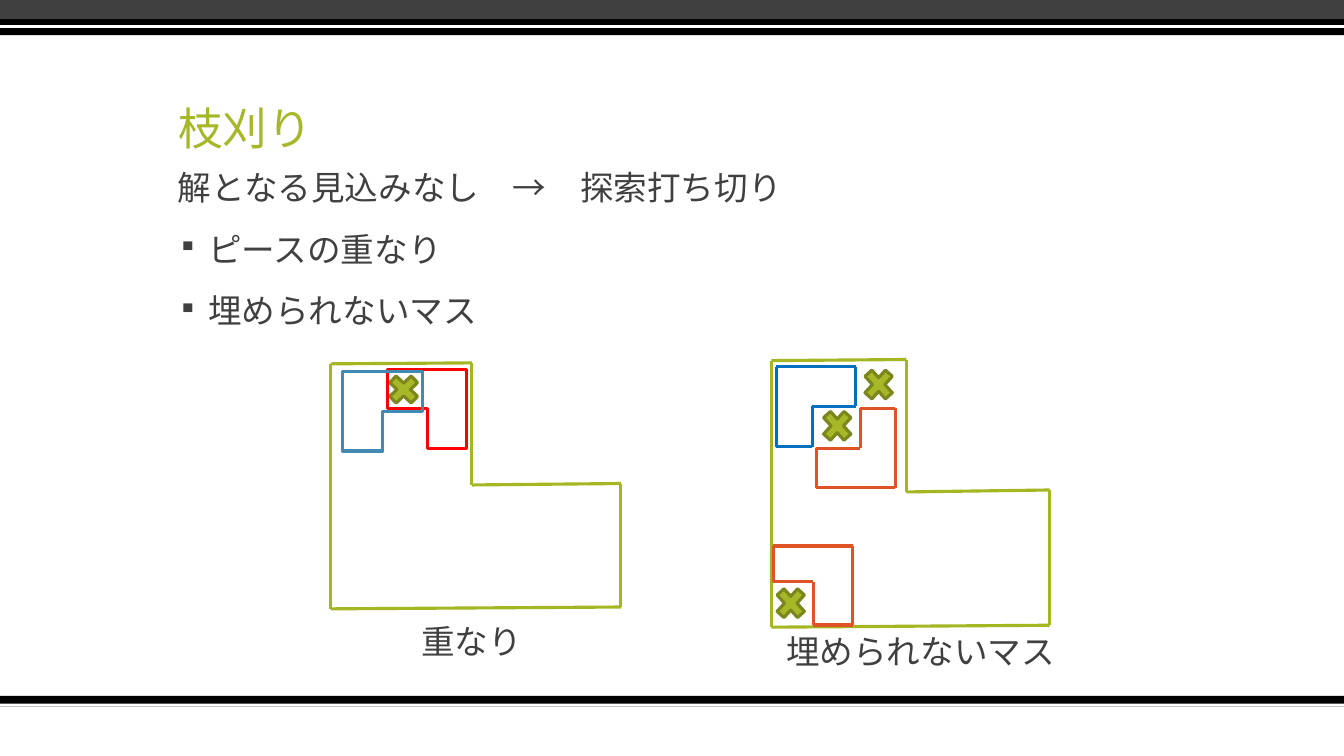
from pptx import Presentation
from pptx.dml.color import RGBColor
from pptx.enum.shapes import MSO_CONNECTOR as Link, MSO_SHAPE as Shape
from pptx.enum.text import MSO_ANCHOR as Anchor, MSO_AUTO_SIZE as Fit, PP_ALIGN as Align
from pptx.oxml.ns import qn
from pptx.util import Pt
from lxml.etree import SubElement as sub

BLACK = RGBColor(0x00, 0x00, 0x00)
WHITE = RGBColor(0xFF, 0xFF, 0xFF)
GREY = RGBColor(0x40, 0x40, 0x40)
LIME = RGBColor(0xA6, 0xB7, 0x27)
GREEN = RGBColor(0xA5, 0xB6, 0x23)
OLIVE = RGBColor(0x7B, 0x87, 0x1D)
ORANGE = RGBColor(0xDF, 0x53, 0x27)
BLUE = RGBColor(0x00, 0x70, 0xC0)
SKY = RGBColor(0x41, 0x8A, 0xB3)
RED = RGBColor(0xFF, 0x00, 0x00)
NOTO = "Noto Sans CJK JP"

deck = Presentation()
deck.slide_width, deck.slide_height = Pt(960), Pt(540)
slide = deck.slides.add_slide(deck.slide_layouts[5])
shapes = slide.shapes


def write(box, text, size=24, font=NOTO, color=GREY, gap=0, bullet=False, first=True):
    frame = box.text_frame
    frame.word_wrap = True
    frame.auto_size = Fit.NONE
    para = frame.paragraphs[0] if first else frame.add_paragraph()
    para.alignment = Align.LEFT
    para.line_spacing = 0.9
    para.space_before = Pt(gap)
    run = para.add_run()
    run.text = text
    run.font.size = Pt(size)
    run.font.name = font
    run.font.color.rgb = color
    sub(run.font._element, qn("a:ea"), typeface=NOTO)
    if bullet:
        props = para._p.get_or_add_pPr()
        props.set("marL", str(Pt(21.6)))
        props.set("indent", str(Pt(-21.6)))
        sub(props, qn("a:buSzPct"), val="80000")
        sub(props, qn("a:buChar"), char="▪")


def draw(kind, left, top, wide, high, fill=None, line=None):
    shape = shapes.add_shape(kind, Pt(left), Pt(top), Pt(wide), Pt(high))
    shape.shadow.inherit = False
    if fill is None:
        shape.fill.background()
    else:
        shape.fill.solid()
        shape.fill.fore_color.rgb = fill
    if line is None:
        shape.line.fill.background()
    else:
        shape.line.color.rgb = line
        shape.line.width = Pt(2.25)
    return shape


# Bars across the top and bottom
for top, high, color in [(497, 7.6, BLACK), (502.6, 2, WHITE), (0, 13.7, GREY),
                         (13.7, 11.5, BLACK), (18, 2, WHITE)]:
    draw(Shape.RECTANGLE, 0, top, 960, high, fill=color)

# Title
title = shapes.title
title.left, title.top, title.width, title.height = Pt(120), Pt(30), Pt(720), Pt(84.5)
title.text_frame.vertical_anchor = Anchor.BOTTOM
write(title, "枝刈り", size=32, color=LIME)

# Body text
body = shapes.add_textbox(Pt(120), Pt(119), Pt(720), Pt(324))
write(body, "解となる見込みなし　→　探索打ち切り", gap=18)
for item in ["ピースの重なり", "埋められないマス"]:
    write(body, item, gap=18, bullet=True, first=False)

# Boards and pieces, drawn edge by edge around their corners
loops = [
    (GREEN, [(236.2, 259.9), (337, 259.2), (337, 346.4),
             (443.5, 345.4), (443.5, 433.6), (236.2, 434.9)]),
    (GREEN, [(551, 257.6), (647.5, 256.8), (647.5, 351.4),
             (749.7, 350), (749.7, 446.6), (551, 448)]),
    (ORANGE, [(614.4, 291.6), (639.6, 291.6), (639.6, 348.4),
              (583, 348.4), (583, 320.2), (614.4, 320.2)]),
    (ORANGE, [(552.4, 390), (609, 390), (609, 446.4),
              (581, 446.4), (581, 415.4), (552.4, 415.4)]),
    (BLUE, [(554.6, 262), (611.2, 262), (611.2, 290.2),
            (580.2, 290.2), (580.2, 319), (554.6, 319)]),
]
for color, spots in loops:
    for (x1, y1), (x2, y2) in zip(spots, spots[1:] + spots[:1]):
        edge = shapes.add_connector(Link.STRAIGHT, Pt(x1), Pt(y1), Pt(x2), Pt(y2))
        edge.line.color.rgb = color
        edge.line.width = Pt(2.25)
        sub(edge._element.spPr, qn("a:effectLst"))

# Crosses on the bad squares
for left, top, wide, high in [(273.6, 264.2, 29.5, 28.1), (550.8, 415.4, 28.1, 31),
                              (613.6, 259.2, 28.1, 31), (584, 288.7, 28.1, 31)]:
    draw(Shape.MATH_MULTIPLY, left, top, wide, high, fill=LIME, line=OLIVE)

# Overlapping pieces on the left board
for left, top, turn, color in [(276.6, 263.6, 180, RED), (244.8, 265.2, 90, SKY)]:
    piece = draw(Shape.CORNER, left, top, 56.9, 56.9, line=color)
    piece.rotation = turn

# Captions
for text, left, top, wide, high in [("重なり", 293.8, 443.5, 91.4, 31),
                                    ("埋められないマス", 554.4, 450.7, 212.4, 33.1)]:
    label = shapes.add_textbox(Pt(left), Pt(top), Pt(wide), Pt(high))
    write(label, text, font="Roboto")

deck.save("out.pptx")
